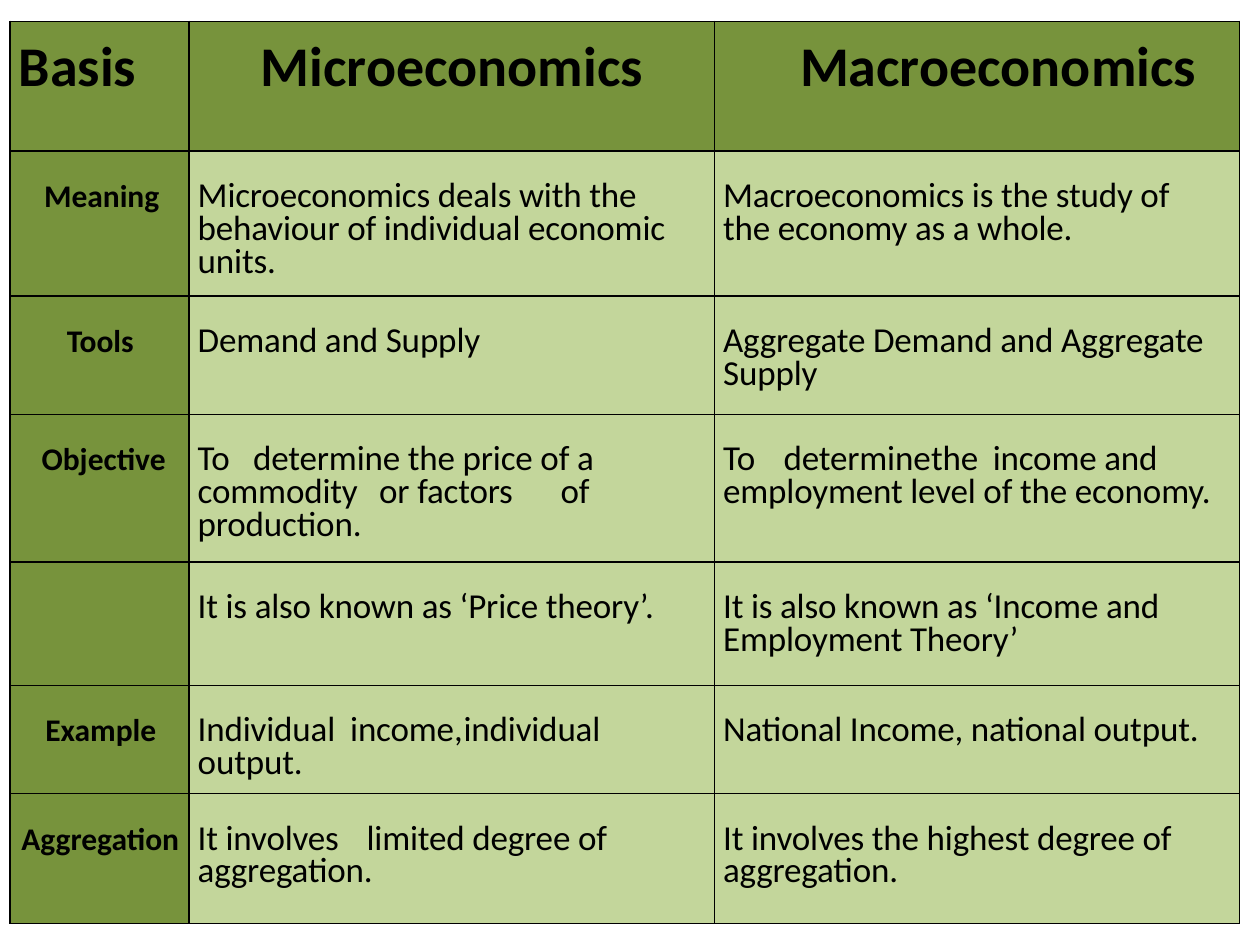
from dataclasses import dataclass

from lxml.etree import SubElement
from pptx import Presentation
from pptx.dml.color import RGBColor
from pptx.oxml.ns import qn
from pptx.util import Inches, Pt

DARK, LIGHT, BLACK = "77933C", "C3D69B", "000000"
FONT = "Calibri"
COL_WIDTHS = (1.42, 4.17, 4.17)
ROW_HEIGHTS = (1.03, 1.15, 0.94, 1.17, 0.98, 0.86, 1.03)


@dataclass
class Line:
    text: str
    tabs: tuple[float, ...] = ()


@dataclass
class Style:
    size: int
    leading: float
    bold: bool
    fill: str
    spacing: int = 0  # hundredths of a point


@dataclass
class Row:
    label: str
    indent: float
    micro: list[Line]
    macro: list[Line]


HEADER = Style(32, 22.9, True, DARK)
LABEL = Style(18, 18.5, True, DARK)
BODY = Style(20, 18.8, False, LIGHT, -10)

HEADINGS = (("Basis", 0.07), ("Microeconomics", 0.57), ("Macroeconomics", 0.68))
ROWS = [
    Row("Meaning", 0.27,
        [Line("Microeconomics deals with the"),
         Line("behaviour of individual economic units.")],
        [Line("Macroeconomics is the study of"), Line("the economy as a whole.")]),
    Row("Tools", 0.45,
        [Line("Demand and Supply")],
        [Line("Aggregate Demand and Aggregate"), Line("Supply")]),
    Row("Objective", 0.25,
        [Line("To\tdetermine the price of a", (0.44,)),
         Line("commodity\tor factors\tof", (1.44, 1.94, 2.88)),
         Line("production.")],
        [Line("To\tdetermine\tthe\tincome and employment level of the economy.",
              (0.48, 1.65, 2.14, 3.01))]),
    Row("", 0.07,
        [Line("It is also known as ‘Price theory’.")],
        [Line("It is also known as ‘Income and Employment Theory’")]),
    Row("Example", 0.28,
        [Line("Individual\tincome,\tindividual", (1.21, 2.11)), Line("output.")],
        [Line("National Income, national output.")]),
    Row("Aggregation", 0.09,
        [Line("It involves\tlimited degree of", (1.34,)), Line("aggregation.")],
        [Line("It involves the highest degree of"), Line("aggregation.")]),
]


def rgb(value: str) -> RGBColor:
    return RGBColor.from_string(value)


def add_borders(cell) -> None:
    tc_pr = cell._tc.get_or_add_tcPr()
    for i, side in enumerate(("lnL", "lnR", "lnT", "lnB")):
        ln = tc_pr.makeelement(qn(f"a:{side}"), {"w": str(Pt(1))})
        fill = SubElement(ln, qn("a:solidFill"))
        SubElement(fill, qn("a:srgbClr"), val=BLACK)
        tc_pr.insert(i, ln)  # borders come before the fill


def add_tabs(p, stops: tuple[float, ...]) -> None:
    tab_list = SubElement(p._p.get_or_add_pPr(), qn("a:tabLst"))
    for stop in stops:
        SubElement(tab_list, qn("a:tab"), pos=str(Inches(stop)), algn="l")


def fill_cell(cell, lines: list[Line], style: Style, indent: float = 0.07) -> None:
    cell.fill.solid()
    cell.fill.fore_color.rgb = rgb(style.fill)
    add_borders(cell)
    cell.margin_left = Inches(indent)
    cell.margin_right = cell.margin_bottom = 0
    cell.margin_top = Pt(style.leading)  # text starts one line down
    tf = cell.text_frame
    for i, line in enumerate(lines):
        p = tf.paragraphs[0] if i == 0 else tf.add_paragraph()
        p.text = line.text
        p.line_spacing = Pt(style.leading)
        if line.tabs:
            add_tabs(p, line.tabs)
        for r in p.runs:
            r.font.name = FONT
            r.font.size = Pt(style.size)
            r.font.bold = style.bold
            r.font.color.rgb = rgb(BLACK)
            r._r.get_or_add_rPr().set("spc", str(style.spacing))


def main() -> None:
    prs = Presentation()
    prs.slide_width, prs.slide_height = Inches(10), Inches(7.5)
    s = prs.slides.add_slide(prs.slide_layouts[6])

    # Table grid
    table = s.shapes.add_table(
        len(ROW_HEIGHTS), len(COL_WIDTHS), Inches(0.08), Inches(0.17),
        Inches(sum(COL_WIDTHS)), Inches(sum(ROW_HEIGHTS))).table
    table.first_row = table.horz_banding = False
    for column, width in zip(table.columns, COL_WIDTHS):
        column.width = Inches(width)
    for table_row, height in zip(table.rows, ROW_HEIGHTS):
        table_row.height = Inches(height)

    # Headings
    for c, (text, indent) in enumerate(HEADINGS):
        fill_cell(table.cell(0, c), [Line(text)], HEADER, indent)

    # Comparison rows
    for n, row in enumerate(ROWS, start=1):
        fill_cell(table.cell(n, 0), [Line(row.label)], LABEL, row.indent)
        fill_cell(table.cell(n, 1), row.micro, BODY)
        fill_cell(table.cell(n, 2), row.macro, BODY)

    prs.save("out.pptx")


if __name__ == "__main__":
    main()
